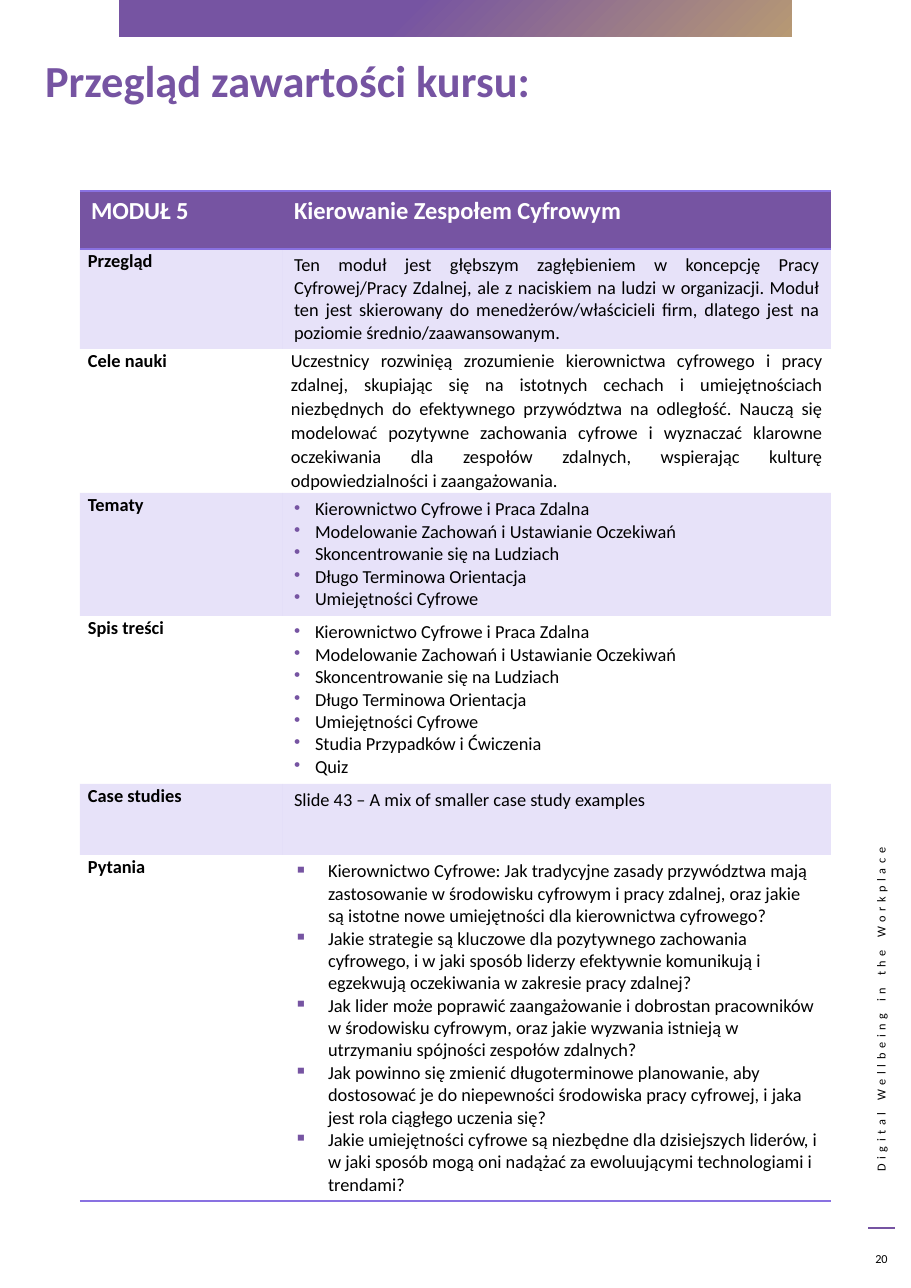
from lxml import etree
from pptx import Presentation
from pptx.dml.color import RGBColor
from pptx.enum.shapes import MSO_CONNECTOR, MSO_SHAPE
from pptx.enum.text import MSO_ANCHOR, MSO_AUTO_SIZE, PP_ALIGN
from pptx.oxml import parse_xml
from pptx.oxml.ns import qn
from pptx.util import Pt

LEFT, CENTER, RIGHT, JUSTIFY = PP_ALIGN.LEFT, PP_ALIGN.CENTER, PP_ALIGN.RIGHT, PP_ALIGN.JUSTIFY
TOP, MIDDLE = MSO_ANCHOR.TOP, MSO_ANCHOR.MIDDLE
NO_FIT = MSO_AUTO_SIZE.NONE
RECTANGLE, STRAIGHT = MSO_SHAPE.RECTANGLE, MSO_CONNECTOR.STRAIGHT

EMU_PER_PX = 8298
FONT = "Calibri"
COLORS = {"purple": "7654A2", "violet": "8971E1", "gold": "B79974",
          "black": "000000", "white": "FFFFFF"}
NS = "http://schemas.openxmlformats.org/drawingml/2006/main"
PLAIN_TABLE = "{2D5ABB26-0587-4C30-8999-92F81FD0307C}"

TOPICS = [
    "Kierownictwo Cyfrowe i Praca Zdalna",
    "Modelowanie Zachowań i Ustawianie Oczekiwań",
    "Skoncentrowanie się na Ludziach",
    "Długo Terminowa Orientacja",
    "Umiejętności Cyfrowe",
]
QUESTIONS = [
    "Kierownictwo Cyfrowe: Jak tradycyjne zasady przywództwa mają zastosowanie w środowisku cyfrowym i pracy zdalnej, oraz jakie są istotne nowe umiejętności dla kierownictwa cyfrowego?",
    "Jakie strategie są kluczowe dla pozytywnego zachowania cyfrowego, i w jaki sposób liderzy efektywnie komunikują i egzekwują oczekiwania w zakresie pracy zdalnej?",
    "Jak lider może poprawić zaangażowanie i dobrostan pracowników w środowisku cyfrowym, oraz jakie wyzwania istnieją w utrzymaniu spójności zespołów zdalnych?",
    "Jak powinno się zmienić długoterminowe planowanie, aby dostosować je do niepewności środowiska pracy cyfrowej, i jaka jest rola ciągłego uczenia się?",
    "Jakie umiejętności cyfrowe są niezbędne dla dzisiejszych liderów, i w jaki sposób mogą oni nadążać za ewoluującymi technologiami i trendami?",
]
OVERVIEW = "Ten moduł jest głębszym zagłębieniem w koncepcję Pracy Cyfrowej/Pracy Zdalnej, ale z naciskiem na ludzi w organizacji. Moduł ten jest skierowany do menedżerów/właścicieli firm, dlatego jest na poziomie średnio/zaawansowanym."
GOALS = "Uczestnicy rozwinięą zrozumienie kierownictwa cyfrowego i pracy zdalnej, skupiając się na istotnych cechach i umiejętnościach niezbędnych do efektywnego przywództwa na odległość. Nauczą się modelować pozytywne zachowania cyfrowe i wyznaczać klarowne oczekiwania dla zespołów zdalnych, wspierając kulturę odpowiedzialności i zaangażowania."

TIGHT = {"tight": True}
JUSTIFIED = {"align": JUSTIFY}
DOTS = {"bullet": "•", "indent": 21}
SQUARES = {"bullet": "▪", "indent": 34}
ROWS = [
    (100, "Przegląd", [OVERVIEW], JUSTIFIED),
    (144, "Cele nauki", [GOALS], JUSTIFIED | TIGHT),
    (123, "Tematy", TOPICS, DOTS),
    (168, "Spis treści", TOPICS + ["Studia Przypadków i Ćwiczenia", "Quiz"], DOTS),
    (71, "Case studies", ["Slide 43 – A mix of smaller case study examples"], {}),
    (346, "Pytania", QUESTIONS, SQUARES),
]
HEADER_HEIGHT = 58
COLUMNS = [203, 548]


def px(n):
    return n * EMU_PER_PX


def box(*lengths):
    return [px(n) for n in lengths]


def rgb(name):
    return RGBColor.from_string(COLORS[name])


def add_bullet(p, char, indent):
    pPr = p._p.get_or_add_pPr()
    pPr.set("marL", str(px(indent)))
    pPr.set("indent", str(-px(indent)))
    color = etree.SubElement(pPr, qn("a:buClr"))
    etree.SubElement(color, qn("a:srgbClr"), val=COLORS["purple"])
    etree.SubElement(pPr, qn("a:buChar"), char=char)


def write(tf, lines, size, color="black", bold=False, align=LEFT,
          bullet=None, indent=0, spacing=1.0):
    tf.text = "\n".join(lines)
    for p in tf.paragraphs:
        p.alignment = align
        p.line_spacing = spacing
        if bullet:
            add_bullet(p, bullet, indent)
        for r in p.runs:
            r.font.name, r.font.size, r.font.bold = FONT, Pt(size), bold
            r.font.color.rgb = rgb(color)


def add_label(s, area, text, align, anchor=TOP):
    label = s.shapes.add_textbox(*box(*area))
    tf = label.text_frame
    tf.word_wrap = True
    tf.vertical_anchor = anchor
    write(tf, [text], 8, align=align)
    return label


def add_title(s, text):
    title = s.shapes.title
    title.left, title.top, title.width, title.height = box(34, 48, 784, 89)
    tf = title.text_frame
    tf.auto_size = NO_FIT
    tf.word_wrap = True
    tf.vertical_anchor = TOP
    write(tf, [text], 29, "purple", bold=True)


def add_band(s):
    band = s.shapes.add_shape(RECTANGLE, *box(119, 0, 673, 37))
    band.shadow.inherit = False
    band.line.fill.background()
    band.fill.solid()
    solid = band._element.spPr.find(qn("a:solidFill"))
    solid.getparent().replace(solid, parse_xml(
        f'<a:gradFill xmlns:a="{NS}"><a:gsLst>'
        f'<a:gs pos="0"><a:srgbClr val="{COLORS["gold"]}"/></a:gs>'
        f'<a:gs pos="58000"><a:srgbClr val="{COLORS["purple"]}"/></a:gs></a:gsLst>'
        '<a:path path="circle"><a:fillToRect l="100000" t="100000"/></a:path></a:gradFill>'))


def add_rule(s):
    rule = s.shapes.add_connector(STRAIGHT, *box(895, 1228, 868, 1228))
    rule.line.color.rgb = rgb("purple")
    rule.line.width = Pt(0.75)
    etree.SubElement(rule._element.spPr, qn("a:effectLst"))


def add_borders(cell, *sides):
    tcPr = cell._tc.get_or_add_tcPr()
    for i, side in enumerate(sides):
        tcPr.insert(i, parse_xml(
            f'<a:{side} xmlns:a="{NS}" w="12700"><a:solidFill>'
            f'<a:srgbClr val="{COLORS["violet"]}"/></a:solidFill></a:{side}>'))


def fill_cell(cell, color, alpha=100):
    cell.fill.solid()
    cell.fill.fore_color.rgb = rgb(color)
    if alpha < 100:
        value = cell._tc.tcPr.find(qn("a:solidFill")).find(qn("a:srgbClr"))
        etree.SubElement(value, qn("a:alpha"), val=str(alpha * 1000))


def write_cell(cell, lines, tight=False, size=12, **style):
    if tight:
        cell.margin_left = cell.margin_right = px(8)
        cell.margin_top = cell.margin_bottom = 0
        style["spacing"] = 1.07
    write(cell.text_frame, lines, size, **style)


def add_module_table(s):
    heights = [HEADER_HEIGHT] + [row[0] for row in ROWS]
    frame = s.shapes.add_table(len(heights), len(COLUMNS),
                               *box(80, 191, sum(COLUMNS), sum(heights)))
    table = frame.table
    table.first_row = table.horz_banding = False
    table._tbl.tblPr.find(qn("a:tableStyleId")).text = PLAIN_TABLE
    for column, width in zip(table.columns, COLUMNS):
        column.width = px(width)
    for row, height in zip(table.rows, heights):
        row.height = px(height)

    for cell, text in zip(table.rows[0].cells, ["MODUŁ 5", "Kierowanie Zespołem Cyfrowym"]):
        write_cell(cell, [text], size=16, color="white", bold=True)
        fill_cell(cell, "purple")
        add_borders(cell, "lnT", "lnB")

    for i, (_, heading, lines, style) in enumerate(ROWS, 1):
        write_cell(table.cell(i, 0), [heading], tight=True, bold=True)
        write_cell(table.cell(i, 1), lines, **style)
        for cell in table.rows[i].cells:
            if i % 2:
                fill_cell(cell, "violet", 20)
            else:
                cell.fill.background()
            if i == len(ROWS):
                add_borders(cell, "lnB")


def main():
    prs = Presentation()
    prs.slide_width, prs.slide_height = box(911, 1288)
    s = prs.slides.add_slide(prs.slide_layouts[5])
    side = add_label(s, (690, 1015, 382, 26), "Digital Wellbeing in the Workplace", RIGHT)
    side.rotation = 270
    side.text_frame.paragraphs[0].runs[0].font._element.set("spc", "300")
    add_rule(s)
    add_band(s)
    add_title(s, "Przegląd zawartości kursu:")
    add_label(s, (860, 1243, 43, 32), "20", CENTER, MIDDLE)
    add_module_table(s)
    prs.save("out.pptx")


if __name__ == "__main__":
    main()
